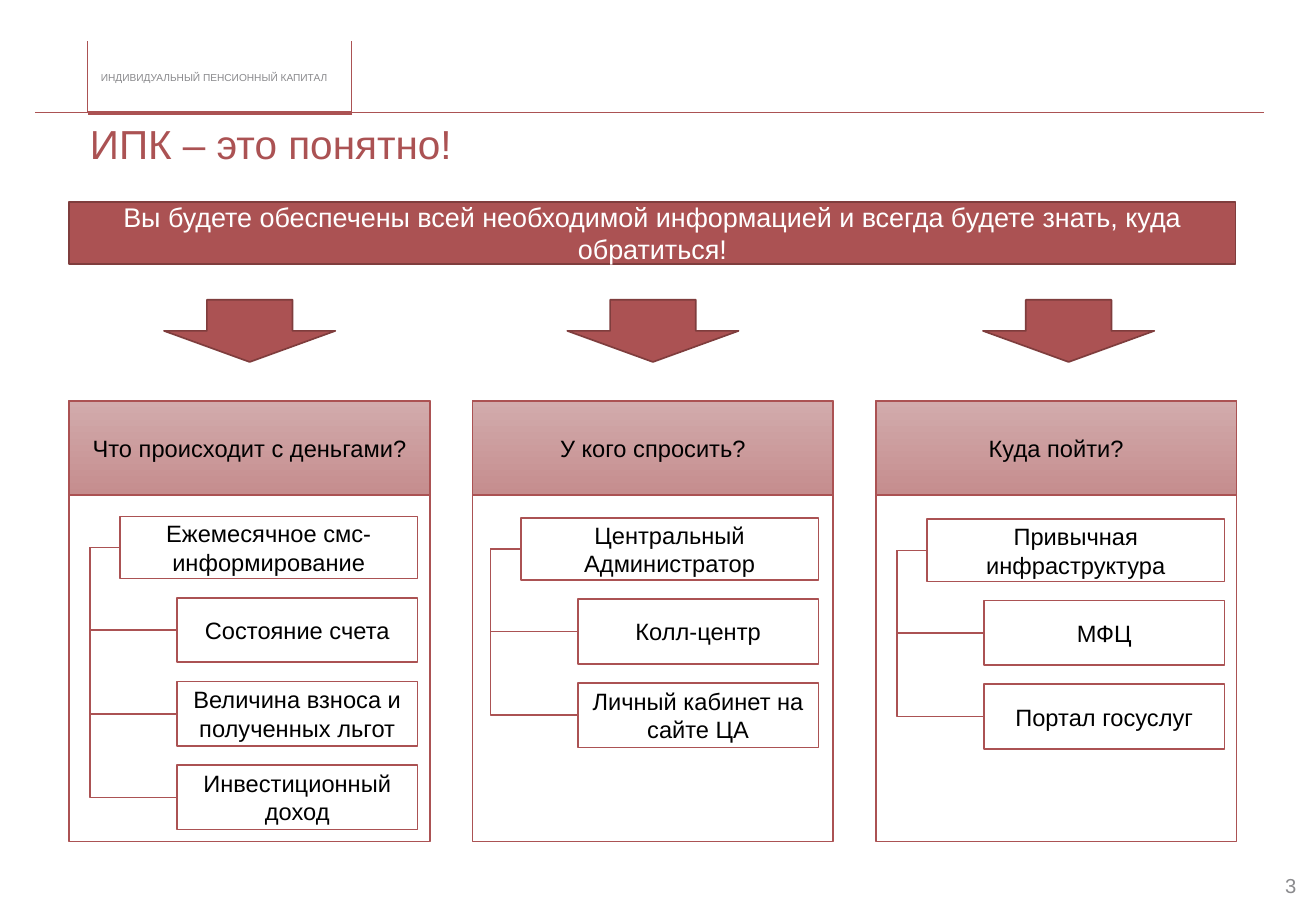
"""Build the slide on how clear the pension capital scheme is."""
from lxml import etree
from pptx import Presentation
from pptx.dml.color import RGBColor
from pptx.enum.shapes import MSO_CONNECTOR, MSO_SHAPE
from pptx.enum.text import MSO_ANCHOR, MSO_AUTO_SIZE, PP_ALIGN
from pptx.oxml.ns import qn
from pptx.util import Cm, Pt

RECT = MSO_SHAPE.RECTANGLE
ARROW = MSO_SHAPE.DOWN_ARROW
ELBOW = MSO_CONNECTOR.ELBOW
STRAIGHT = MSO_CONNECTOR.STRAIGHT
LEFT = PP_ALIGN.LEFT
CENTER = PP_ALIGN.CENTER
MIDDLE = MSO_ANCHOR.MIDDLE
FIXED = MSO_AUTO_SIZE.NONE

FONT = "Arial"
RED = RGBColor(0xAB, 0x52, 0x53)
DARK = RGBColor(0x7F, 0x3D, 0x3D)
ROSE = RGBColor(0xD2, 0xAB, 0xAC)
PINK = RGBColor(0xC5, 0x8D, 0x8E)
GRAY = RGBColor(0x8A, 0x8A, 0x8D)
WHITE = RGBColor(0xFF, 0xFF, 0xFF)
BLACK = RGBColor(0x00, 0x00, 0x00)

LEFT_SITE = 1
TOP = 8.38
WIDTH = 7.54
PITCH = 8.43
MARGIN = 1.45

FRAME = [
    (1.83, 2.34, 0.74, 2.34, 0.25),
    (7.36, 2.36, 1.83, 2.36, 2.25),
    (26.42, 2.34, 7.32, 2.34, 0.25),
    (1.83, 2.36, 1.83, 0.86, 0.25),
    (7.34, 2.36, 7.34, 0.86, 0.25),
]
COLUMNS = [
    ("Что происходит с деньгами?", 3.43, 2.51, 10.8,
     ["Ежемесячное смс-информирование", "Состояние счета",
      "Величина взноса и полученных льгот", "Инвестиционный доход"]),
    ("У кого спросить?", 11.86, 10.89, 10.83,
     ["Центральный Администратор", "Колл-центр",
      "Личный кабинет на сайте ЦА"]),
    ("Куда пойти?", 20.55, 19.38, 10.86,
     ["Привычная инфраструктура", "МФЦ", "Портал госуслуг"]),
]


def write(shape, text, size, color, align=CENTER):
    """Put one formatted paragraph into a shape."""
    frame = shape.text_frame
    frame.word_wrap = True
    frame.vertical_anchor = MIDDLE
    frame.text = text
    para = frame.paragraphs[0]
    para.alignment = align
    para.font.name = FONT
    para.font.size = Pt(size)
    para.font.color.rgb = color


def trim(shape):
    """Fix the size of a text shape and clear its insets."""
    frame = shape.text_frame
    frame.auto_size = FIXED
    frame.margin_left = frame.margin_right = 0
    frame.margin_top = frame.margin_bottom = 0


def add_label(slide, place, text, size, align):
    """Add a gray text box without insets."""
    label = slide.shapes.add_textbox(*map(Cm, place))
    write(label, text, size, GRAY, align)
    trim(label)


def add_block(shapes, kind, place, fill, edge):
    """Add a solid shape with a thin outline."""
    block = shapes.add_shape(kind, *map(Cm, place))
    block.shadow.inherit = False
    block.fill.solid()
    block.fill.fore_color.rgb = fill
    block.line.color.rgb = edge
    block.line.width = Pt(1)
    return block


def add_box(shapes, place, text):
    """Add a white box with a red outline and black text."""
    box = add_block(shapes, RECT, place, WHITE, RED)
    write(box, text, 14, BLACK)
    return box


def add_line(shapes, kind, ends, width):
    """Add a red line without shadow."""
    line = shapes.add_connector(kind, *ends)
    line.line.color.rgb = RED
    line.line.width = Pt(width)
    etree.SubElement(line._element.spPr, qn("a:effectLst"))
    return line


def add_branch(shapes, lead, item):
    """Join the left sides of two boxes with a bent line."""
    ends = (lead.left, lead.top + lead.height // 2,
            item.left, item.top + item.height // 2)
    line = add_line(shapes, ELBOW, ends, 1)
    line.begin_connect(lead, LEFT_SITE)
    line.end_connect(item, LEFT_SITE)
    guides = line._element.spPr.find(qn("a:prstGeom")).find(qn("a:avLst"))
    etree.SubElement(guides, qn("a:gd"), name="adj1", fmla="val -53200")


def add_column(slide, left, head, x, y, items):
    """Add a grouped panel with its heading and tree of boxes."""
    shapes = slide.shapes.add_group_shape().shapes
    add_block(shapes, RECT, (left, TOP, WIDTH, 9.22), WHITE, RED)
    title = add_box(shapes, (left, TOP, WIDTH, 1.98), head)
    title.fill.gradient()
    title.fill.gradient_angle = 270
    for stop, color in zip(title.fill.gradient_stops, (ROSE, PINK)):
        stop.color.rgb = color
    lead = add_box(shapes, (x, y, 6.22, 1.3), items[0])
    boxes = [add_box(shapes, (x + 1.19, y + 1.7 + 1.75 * row, 5.03, 1.35), text)
             for row, text in enumerate(items[1:])]
    for box in boxes:
        add_branch(shapes, lead, box)


def add_title(slide, text):
    """Move and format the title placeholder."""
    title = slide.shapes.title
    title.left, title.top, title.width, title.height = map(
        Cm, (1.88, 2.36, 24.54, 1.42))
    write(title, text, 24, RED, LEFT)
    title.text_frame.paragraphs[0].line_spacing = 0.9
    trim(title)


def main():
    """Build and save the slide."""
    deck = Presentation()
    deck.slide_width, deck.slide_height = Cm(27.51), Cm(19.05)
    slide = deck.slides.add_slide(deck.slide_layouts[5])
    for *ends, width in FRAME:
        add_line(slide.shapes, STRAIGHT, map(Cm, ends), width)
    add_label(slide, (2.11, 1.5, 5.16, 0.25),
              "ИНДИВИДУАЛЬНЫЙ ПЕНСИОННЫЙ КАПИТАЛ", 6, LEFT)
    add_title(slide, "ИПК – это понятно!")
    add_label(slide, (26.44, 18.01, 1.09, 1.02), "3", 12, CENTER)
    banner = add_block(slide.shapes, RECT, (MARGIN, 4.22, 24.38, 1.3), RED, DARK)
    write(banner, "Вы будете обеспечены всей необходимой информацией "
          "и всегда будете знать, куда обратиться!", 16, WHITE)
    for index, (head, tip, x, y, items) in enumerate(COLUMNS):
        add_block(slide.shapes, ARROW, (tip, 6.27, 3.58, 1.3), RED, DARK)
        add_column(slide, MARGIN + PITCH * index, head, x, y, items)
    deck.save("out.pptx")


if __name__ == "__main__":
    main()
